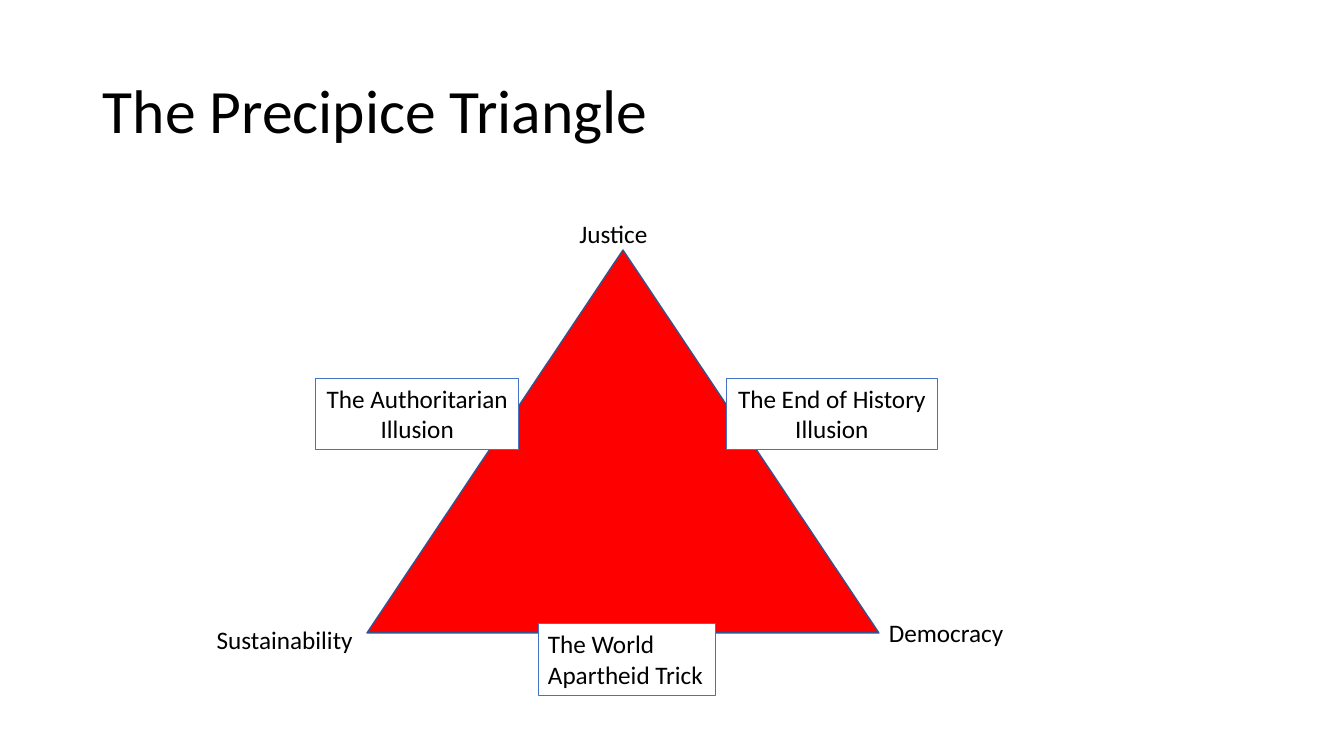
import pptx
import pptx.util
import pptx.dml.color
import pptx.enum.shapes
import pptx.enum.text

Cm, Pt = pptx.util.Cm, pptx.util.Pt
ALIGN = pptx.enum.text.PP_ALIGN
KINDS = pptx.enum.shapes.MSO_SHAPE

TITLE = "The Precipice Triangle"
AREA = (9.25, 6.3, 12.9, 9.65)
# text, left, top, width
GOALS = [
    ("Justice", 14.35, 5.38, 2.39),
    ("Sustainability", 5.21, 15.6, 3.99),
    ("Democracy", 22.15, 15.44, 3.43),
]
# text, left, top, width, alignment
TRAPS = [
    ("The Authoritarian\vIllusion", 7.95, 9.53, 5.13, ALIGN.CENTER),
    ("The End of History\vIllusion", 18.31, 9.53, 5.31, ALIGN.CENTER),
    ("The World\vApartheid Trick", 13.56, 15.72, 4.47, ALIGN.LEFT),
]
GOAL_H, TRAP_H = 1.02, 1.81


def color(code):
    return pptx.dml.color.RGBColor.from_string(code)


def write(shape, text, size=18, align=ALIGN.LEFT, space=1.0,
          anchor=pptx.enum.text.MSO_ANCHOR.TOP, wrap=False):
    frame = shape.text_frame
    frame.word_wrap = wrap
    frame.vertical_anchor = anchor
    kind = pptx.enum.text.MSO_AUTO_SIZE
    frame.auto_size = kind.NONE if wrap else kind.SHAPE_TO_FIT_TEXT
    para = frame.paragraphs[0]
    para.text = text
    para.alignment = align
    para.line_spacing = space
    for run in para.runs:
        run.font.name = "Calibri"
        run.font.size = Pt(size)
        run.font.color.rgb = color("000000")


def draw(slide, kind, box, fill, line, width):
    shape = slide.shapes.add_shape(kind, *map(Cm, box))
    shape.shadow.inherit = False
    shape.fill.solid()
    shape.fill.fore_color.rgb = color(fill)
    shape.line.color.rgb = color(line)
    shape.line.width = Pt(width)
    return shape


def main():
    deck = pptx.Presentation()
    deck.slide_width, deck.slide_height = Cm(33.87), Cm(19.05)
    slide = deck.slides.add_slide(deck.slide_layouts[5])

    title = slide.shapes.title
    title.left, title.top = Cm(2.34), Cm(1.02)
    title.width, title.height = Cm(29.21), Cm(3.68)
    write(title, TITLE, size=44, space=0.9, wrap=True,
          anchor=pptx.enum.text.MSO_ANCHOR.MIDDLE)

    draw(slide, KINDS.ISOSCELES_TRIANGLE, AREA, "FF0000", "325491", 1)
    for text, left, top, width in GOALS:
        box = (left, top, width, GOAL_H)
        write(slide.shapes.add_textbox(*map(Cm, box)), text)
    for text, left, top, width, align in TRAPS:
        box = (left, top, width, TRAP_H)
        trap = draw(slide, KINDS.RECTANGLE, box, "FFFFFF", "4472C4", 0.75)
        write(trap, text, align=align)

    deck.save("out.pptx")


if __name__ == "__main__":
    main()
